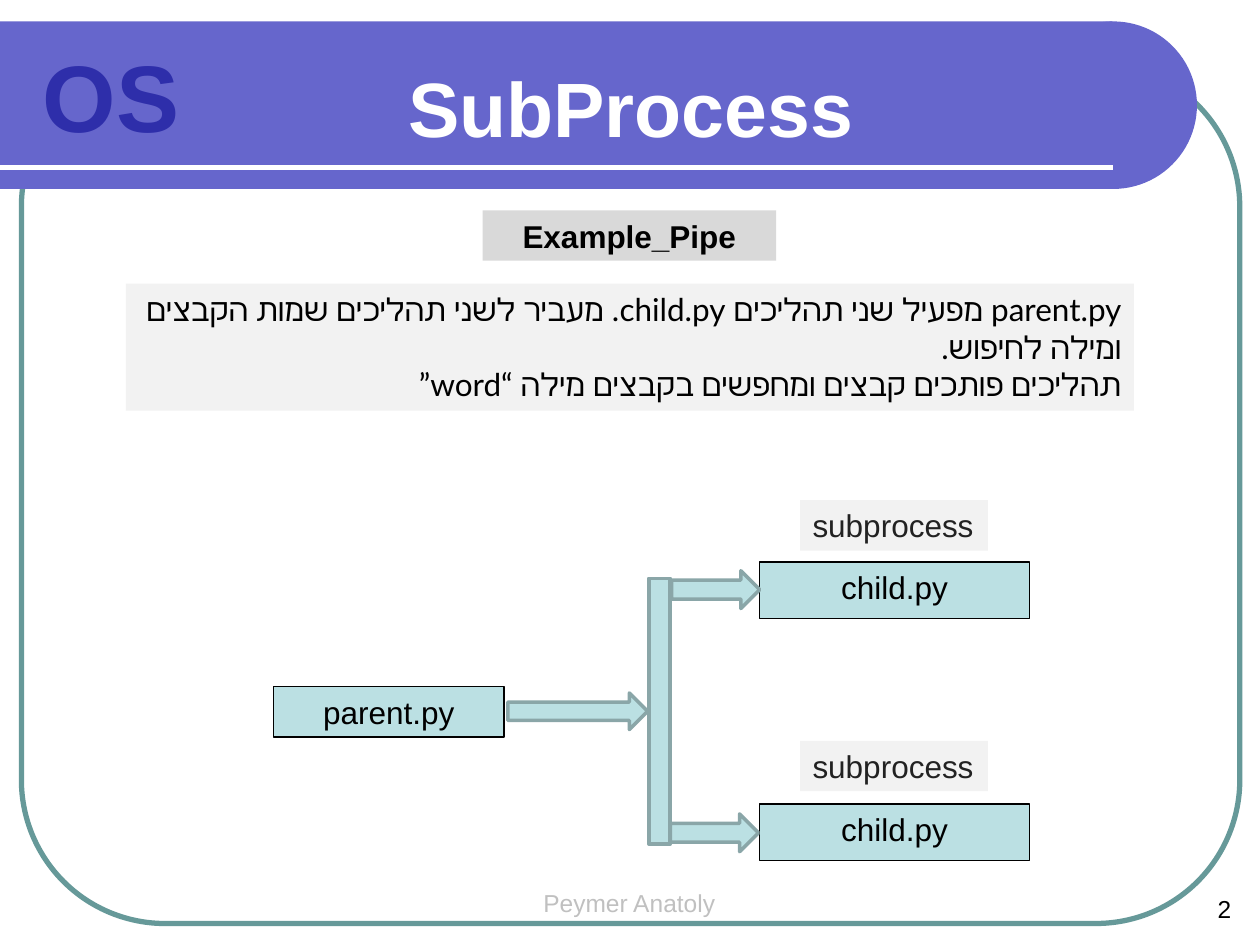
"""Build the SubProcess slide: a parent script that starts two child scripts."""
from lxml import etree
from pptx import Presentation
from pptx.dml.color import RGBColor
from pptx.enum.shapes import MSO_CONNECTOR, MSO_SHAPE
from pptx.enum.text import MSO_ANCHOR, MSO_AUTO_SIZE, PP_ALIGN
from pptx.oxml.ns import qn
from pptx.util import Emu, Pt

PX = 9144
RECT, ROUND, OVAL = MSO_SHAPE.RECTANGLE, MSO_SHAPE.ROUNDED_RECTANGLE, MSO_SHAPE.OVAL
ARROW = MSO_SHAPE.RIGHT_ARROW
LEFT, CENTER, RIGHT = PP_ALIGN.LEFT, PP_ALIGN.CENTER, PP_ALIGN.RIGHT
MIDDLE, TOP = MSO_ANCHOR.MIDDLE, MSO_ANCHOR.TOP
COLORS = {
    "banner": "6666CC", "frame": "669999", "white": "FFFFFF", "black": "000000",
    "course": "2E2EAA", "footer": "C0C0C0", "heading": "D9D9D9", "note": "F2F2F2",
    "label": "222222", "process": "BBE0E3", "pipe": "8AA6A8",
}


def rgb(name):
    return RGBColor.from_string(COLORS[name])


def write(target, text, color, size=18, align=CENTER, anchor=TOP, bold=False,
          font="Arial", rtl=False, wrap=True):
    frame = target.text_frame
    frame.text = text
    frame.word_wrap = wrap
    frame.auto_size = MSO_AUTO_SIZE.NONE
    frame.vertical_anchor = anchor
    for paragraph in frame.paragraphs:
        paragraph.alignment = align
        if rtl:
            paragraph._p.get_or_add_pPr().set("rtl", "1")
        for run in paragraph.runs:
            run.font.name = font
            run.font.size = Pt(size)
            run.font.bold = bold
            run.font.color.rgb = rgb(color)
            etree.SubElement(run._r.get_or_add_rPr(), qn("a:cs")).set("typeface", font)


prs = Presentation()
prs.slide_width, prs.slide_height = Emu(1000 * PX), Emu(750 * PX)
slide = prs.slides.add_slide(prs.slide_layouts[5])
shapes = slide.shapes

backdrop = [
    (ROUND, (17, 50, 967, 683), None, "frame", 3),
    (RECT, (0, 17, 883, 133), "banner", None, 0),
    (OVAL, (817, 17, 133, 133), "banner", None, 0),
]
heading = [(RECT, (383, 167, 233, 40), "heading", None, 0)]
processes = [
    (RECT, (217, 545, 183, 40), "process", "black", 0.75),
    (RECT, (603, 446, 214, 45), "process", "black", 0.75),
    (RECT, (603, 638, 214, 45), "process", "black", 0.75),
]
pipes = [
    (ARROW, (403, 550, 111, 29), "process", "pipe", 2),
    (ARROW, (533, 453, 70, 30), "process", "pipe", 2),
    (ARROW, (532, 646, 70, 30), "process", "pipe", 2),
    (RECT, (515, 459, 17, 211), "process", "pipe", 2),
]
notes = [
    (RECT, (635, 397, 149, 40), "note", None, 0),
    (RECT, (635, 588, 149, 40), "note", None, 0),
    (RECT, (100, 225, 800, 101), "note", None, 0),
]

drawn = []
for kind, box, fill, outline, weight in backdrop + heading + processes + pipes + notes:
    part = shapes.add_shape(kind, *(Emu(v * PX) for v in box))
    part.shadow.inherit = False
    if fill:
        part.fill.solid()
        part.fill.fore_color.rgb = rgb(fill)
    else:
        part.fill.background()
    if outline:
        part.line.color.rgb = rgb(outline)
        part.line.width = Pt(weight)
    else:
        part.line.fill.background()
    drawn.append(part)

frame_outline, banner, banner_end, example, parent, child_1, child_2 = drawn[:7]
label_1, label_2, explanation = drawn[-3:]
frame_outline.adjustments[0] = 0.167

underline = shapes.add_connector(
    MSO_CONNECTOR.STRAIGHT, 0, Emu(133 * PX), Emu(883 * PX), Emu(133 * PX))
underline.line.color.rgb = rgb("white")
underline.line.width = Pt(3)
etree.SubElement(underline._element.spPr, qn("a:effectLst"))

title = shapes.title
title.left, title.top, title.width, title.height = (
    Emu(v * PX) for v in (301, 31, 400, 108))
write(title, "SubProcess", "white", 44, anchor=MIDDLE, bold=True)
shapes._spTree.append(title._element)

for box, text, color, size, align, bold in [
    ((17, 25, 142, 101), "OS", "course", 54, CENTER, True),
    ((408, 700, 183, 35), "Peymer Anatoly", "footer", 14, CENTER, False),
    ((920, 705, 67, 33), "2", "black", 14, RIGHT, False),
]:
    caption = shapes.add_textbox(*(Emu(v * PX) for v in box))
    write(caption, text, color, size, align, bold=bold)

write(example, "Example_Pipe", "black", bold=True)
write(parent, "parent.py", "black", rtl=True)
for child, label in ((child_1, label_1), (child_2, label_2)):
    write(child, "child.py", "black", rtl=True)
    write(label, "subprocess", "label", align=LEFT, wrap=False)
write(explanation,
      "parent.py מפעיל שני תהליכים child.py. מעביר לשני תהליכים שמות הקבצים ומילה לחיפוש.\n"
      "תהליכים פותכים קבצים ומחפשים בקבצים מילה “word”",
      "black", align=RIGHT, font="Lato", rtl=True)

prs.save("out.pptx")
